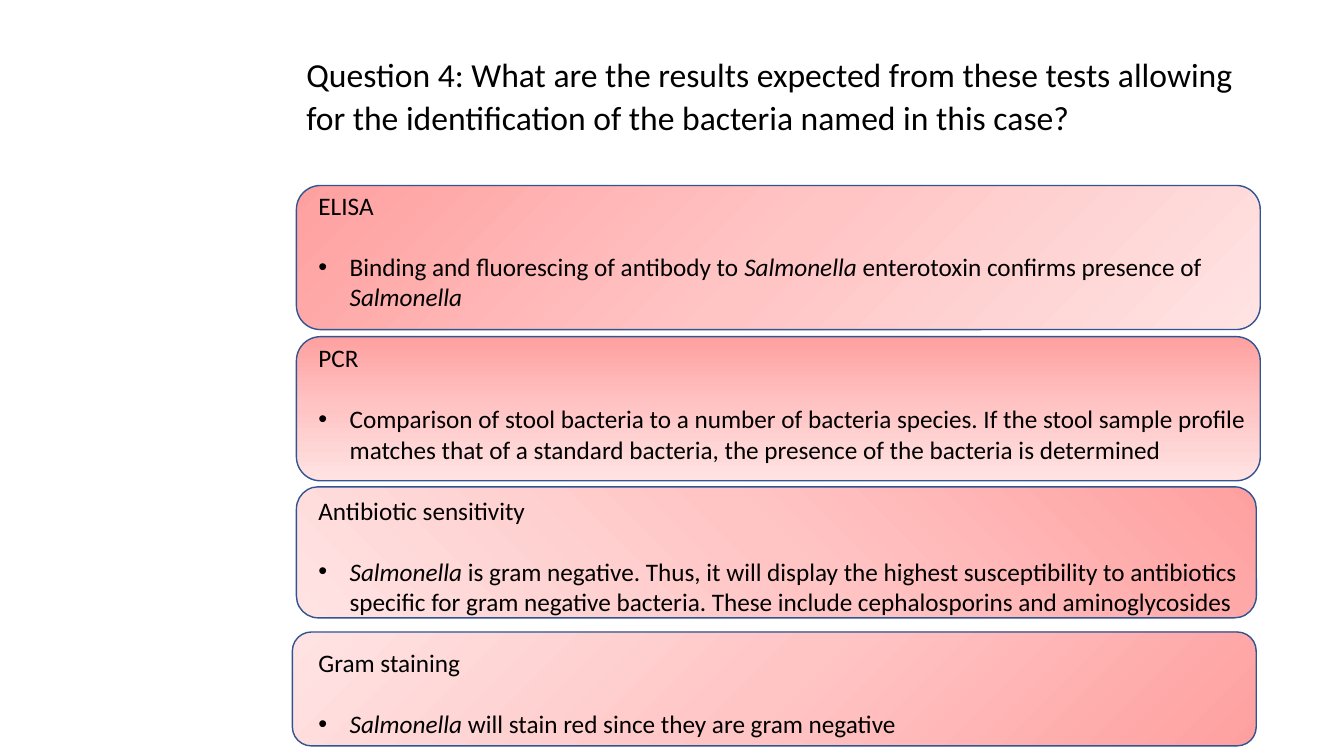
from pptx import Presentation
from pptx.dml.color import RGBColor
from pptx.enum.shapes import MSO_SHAPE
from pptx.oxml import parse_xml
from pptx.oxml.ns import nsdecls, qn
from pptx.util import Inches, Pt

BLACK = RGBColor(0x00, 0x00, 0x00)
OUTLINE_BLUE = RGBColor(0x32, 0x54, 0x91)
GRADIENT = (
    (0, RGBColor(0xFF, 0xA0, 0xA0)),
    (50, RGBColor(0xFF, 0xC5, 0xC5)),
    (100, RGBColor(0xFF, 0xE3, 0xE3)),
)
FONT = "Calibri"
BODY_SIZE = 18
BLANK_LINE = 22  # height of one body line, in points
INDENT = 0.31

QUESTION = ("Question 4: What are the results expected from these tests allowing "
            "for the identification of the bacteria named in this case?")
# Asterisks enclose italic words
TESTS = (
    ("ELISA", "Binding and fluorescing of antibody to *Salmonella* enterotoxin "
              "confirms presence of *Salmonella*"),
    ("PCR", "Comparison of stool bacteria to a number of bacteria species. If the stool "
            "sample profile matches that of a standard bacteria, the presence of the "
            "bacteria is determined"),
    ("Antibiotic sensitivity",
     "*Salmonella* is gram negative. Thus, it will display the highest susceptibility "
     "to antibiotics specific for gram negative bacteria. These include cephalosporins "
     "and aminoglycosides"),
    ("Gram staining", "*Salmonella* will stain red since they are gram negative"),
)
# Left, top, width, height, gradient angle (None: radial from the bottom right)
CARDS = (
    (2.94, 1.84, 9.56, 1.43, 45),
    (2.94, 3.34, 9.56, 1.43, 90),
    (2.94, 4.83, 9.52, 1.30, 135),
    (2.90, 6.27, 9.56, 1.13, None),
)


def set_gradient(shape, angle):
    stops = "".join(f'<a:gs pos="{pos * 1000}"><a:srgbClr val="{color}"/></a:gs>'
                    for pos, color in GRADIENT)
    if angle is None:
        direction = ('<a:path path="circle"><a:fillToRect l="100000" t="100000"/></a:path>'
                     '<a:tileRect r="-100000" b="-100000"/>')
    else:
        direction = f'<a:lin ang="{angle * 60000}" scaled="0"/>'
    shape.fill.gradient()
    default_fill = shape._element.spPr.find(qn("a:gradFill"))
    default_fill.getparent().replace(default_fill, parse_xml(
        f'<a:gradFill {nsdecls("a")} rotWithShape="1">'
        f'<a:gsLst>{stops}</a:gsLst>{direction}</a:gradFill>'))


def add_bullet(paragraph):
    properties = paragraph._p.get_or_add_pPr()
    properties.set("marL", str(Inches(INDENT)))
    properties.set("indent", str(Inches(-INDENT)))
    properties.append(parse_xml(f'<a:buFont {nsdecls("a")} typeface="Arial"/>'))
    properties.append(parse_xml(f'<a:buChar {nsdecls("a")} char="•"/>'))


def write_paragraph(frame, text, *, size=BODY_SIZE, first=False, bullet=False,
                    before=0, after=0, line_spacing=1.0):
    paragraph = frame.paragraphs[0] if first else frame.add_paragraph()
    if bullet:
        add_bullet(paragraph)
    paragraph.line_spacing = line_spacing
    paragraph.space_before = Pt(before)
    paragraph.space_after = Pt(after)
    for position, part in enumerate(text.split("*")):
        if part:
            run = paragraph.add_run()
            run.text = part
            run.font.name = FONT
            run.font.size = Pt(size)
            run.font.color.rgb = BLACK
            run.font.italic = position % 2 == 1


def add_text_frame(slide, left, top, width, height):
    box = slide.shapes.add_textbox(Inches(left), Inches(top), Inches(width), Inches(height))
    box.text_frame.word_wrap = True
    return box.text_frame


def add_card(slide, left, top, width, height, angle):
    card = slide.shapes.add_shape(MSO_SHAPE.ROUNDED_RECTANGLE, Inches(left), Inches(top),
                                  Inches(width), Inches(height))
    card.shadow.inherit = False
    set_gradient(card, angle)
    card.line.color.rgb = OUTLINE_BLUE
    card.line.width = Pt(1)


def add_question(slide, left, top, width, height):
    frame = add_text_frame(slide, left, top, width, height)
    write_paragraph(frame, QUESTION, size=24, first=True, after=8, line_spacing=1.07)


def add_answers(slide, left, top, width, height):
    frame = add_text_frame(slide, left, top, width, height)
    for number, (test, result) in enumerate(TESTS):
        first = number == 0
        write_paragraph(frame, test, first=first, before=0 if first else BLANK_LINE)
        write_paragraph(frame, result, bullet=True, before=BLANK_LINE)


def main():
    presentation = Presentation()
    presentation.slide_width = Inches(13.33)
    presentation.slide_height = Inches(7.5)
    slide = presentation.slides.add_slide(presentation.slide_layouts[6])

    # Cards behind the text
    for card in CARDS:
        add_card(slide, *card)

    # Question and answers
    add_question(slide, 2.94, 0.46, 9.56, 0.97)
    add_answers(slide, 3.06, 1.84, 9.86, 5.55)

    presentation.save("out.pptx")


if __name__ == "__main__":
    main()
